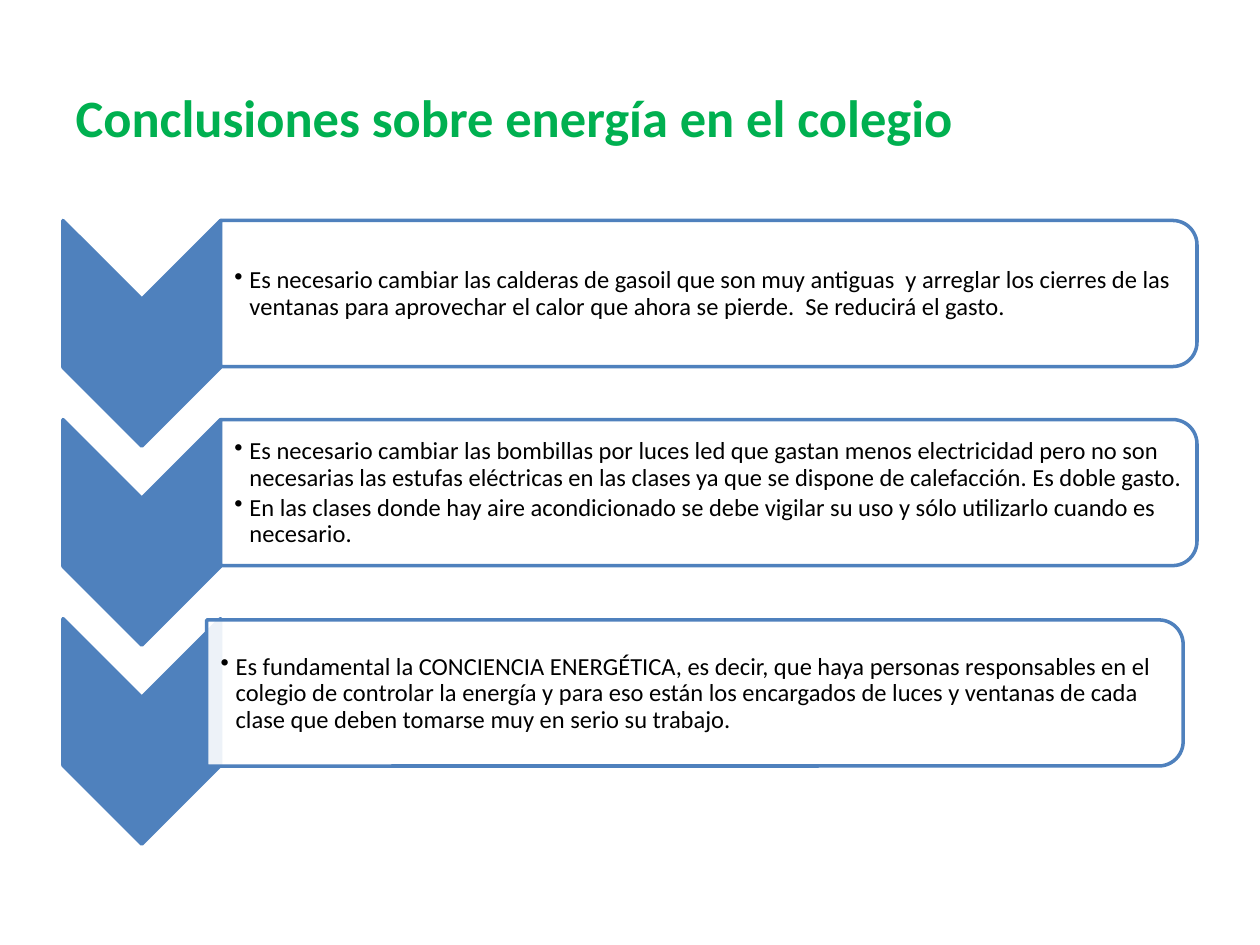
"""Build the slide of conclusions on energy use at the school."""
from dataclasses import dataclass

from lxml import etree
from pptx import Presentation
from pptx.dml.color import RGBColor
from pptx.enum.shapes import MSO_SHAPE
from pptx.enum.text import MSO_ANCHOR, PP_ALIGN
from pptx.oxml.ns import qn
from pptx.shapes.autoshape import Shape
from pptx.slide import Slide
from pptx.text.text import _Paragraph
from pptx.util import Inches, Pt

CHEVRON = MSO_SHAPE.CHEVRON
CARD = MSO_SHAPE.ROUND_2_SAME_RECTANGLE
MIDDLE = MSO_ANCHOR.MIDDLE
LEFT = PP_ALIGN.LEFT
FONT = "Calibri"
COLORS = {"title": "00B050", "blue": "4F81BD", "white": "FFFFFF", "text": "000000"}
TOP, STEP = 1.75, 1.58


@dataclass
class Row:
    left: float
    drop: float
    points: tuple[str, ...]


ROWS = (
    Row(1.75, 0, (
        "Es necesario cambiar las calderas de gasoil que son muy antiguas  y arreglar "
        "los cierres de las ventanas para aprovechar el calor que ahora se pierde.  "
        "Se reducirá el gasto.",
    )),
    Row(1.75, 0, (
        "Es necesario cambiar las bombillas por luces led que gastan menos electricidad "
        "pero no son necesarias las estufas eléctricas en las clases ya que se dispone "
        "de calefacción. Es doble gasto.",
        "En las clases donde hay aire acondicionado se debe vigilar su uso y sólo "
        "utilizarlo cuando es necesario.",
    )),
    Row(1.64, 0.01, (
        "Es fundamental la CONCIENCIA ENERGÉTICA, es decir, que haya personas "
        "responsables en el colegio de controlar la energía y para eso están los "
        "encargados de luces y ventanas de cada clase que deben tomarse muy en serio "
        "su trabajo.",
    )),
)


def color(name: str) -> RGBColor:
    return RGBColor.from_string(COLORS[name])


def add_run(para: _Paragraph, text: str, size: int, tint: str, bold: bool = False) -> None:
    run = para.add_run()
    run.text = text
    run.font.name = FONT
    run.font.size = Pt(size)
    run.font.bold = bold
    run.font.color.rgb = color(tint)


def add_turned(slide: Slide, kind: int, left: float, top: float,
               width: float, height: float, fill: str) -> Shape:
    """Add a shape turned a quarter, placed by the area it covers."""
    shift = (width - height) / 2
    shape = slide.shapes.add_shape(kind, Inches(left + shift), Inches(top - shift),
                                   Inches(height), Inches(width))
    shape.rotation = 90
    shape.shadow.inherit = False
    shape.fill.solid()
    shape.fill.fore_color.rgb = color(fill)
    shape.line.color.rgb = color("blue")
    shape.line.width = Pt(2)
    return shape


def set_alpha(shape: Shape, percent: int) -> None:
    tone = shape.fill._xPr.find(qn("a:solidFill"))[0]
    etree.SubElement(tone, qn("a:alpha"), val=str(percent * 1000))


def add_points(slide: Slide, left: float, top: float, points: tuple[str, ...]) -> None:
    box = slide.shapes.add_textbox(Inches(left), Inches(top), Inches(7.69), Inches(1.05))
    frame = box.text_frame
    frame.word_wrap = True
    frame.vertical_anchor = MIDDLE
    frame.margin_left = Inches(0.11)
    frame.margin_top = frame.margin_right = frame.margin_bottom = Inches(0.01)
    for index, text in enumerate(points):
        para = frame.add_paragraph() if index else frame.paragraphs[0]
        para.line_spacing = 0.9
        para.space_after = Pt(2.1)
        props = para._p.get_or_add_pPr()
        props.set("marL", str(Inches(0.12)))
        props.set("indent", str(Inches(-0.12)))
        etree.SubElement(props, qn("a:buChar"), char="•")
        add_run(para, text, 14, "text")


def add_row(slide: Slide, row: Row, top: float) -> None:
    add_turned(slide, CHEVRON, 0.5, top, 1.25, 1.79, "blue")
    card = add_turned(slide, CARD, row.left, top + row.drop, 7.75, 1.16, "white")
    set_alpha(card, 90)
    add_points(slide, row.left, top + row.drop + 0.06, row.points)


def add_title(slide: Slide, text: str) -> None:
    title = slide.shapes.title
    title.left, title.top = Inches(0.5), Inches(0.3)
    title.width, title.height = Inches(9), Inches(1.25)
    title.text_frame.vertical_anchor = MIDDLE
    para = title.text_frame.paragraphs[0]
    para.alignment = LEFT
    add_run(para, text, 30, "title", True)


def main() -> None:
    deck = Presentation()
    deck.slide_width, deck.slide_height = Inches(10), Inches(7.5)
    slide = deck.slides.add_slide(deck.slide_layouts[5])
    add_title(slide, "Conclusiones sobre energía en el colegio")
    for index, row in enumerate(ROWS):
        add_row(slide, row, TOP + index * STEP)
    deck.save("out.pptx")


if __name__ == "__main__":
    main()
